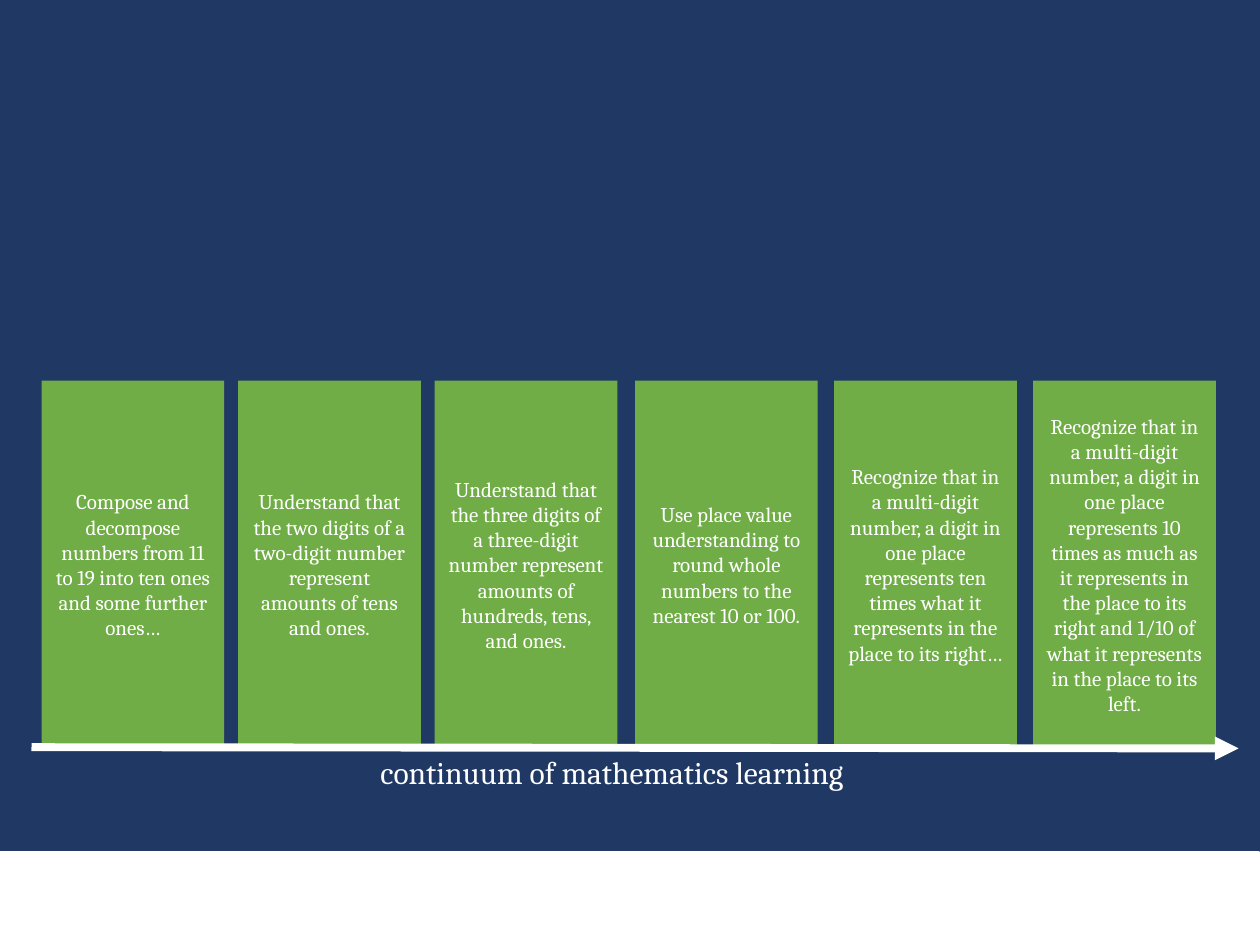
import pptx
import pptx.dml.color
import pptx.enum.shapes
import pptx.enum.text
import pptx.util
from lxml import etree
from pptx.oxml.ns import qn

COLORS = {"navy": "203864", "green": "70AD47", "white": "FFFFFF"}
WIDTH, HEIGHT = 10, 7.5

STANDARDS = [
    "Compose and decompose numbers from 11 to 19 into ten ones and some further ones…",
    "Understand that the two digits of a two-digit number represent amounts of tens and ones.",
    "Understand that the three digits of a three-digit number represent amounts of "
    "hundreds, tens, and ones.",
    "Use place value understanding to round whole numbers to the nearest 10 or 100.",
    "Recognize that in a multi-digit number, a digit in one place represents ten times "
    "what it represents in the place to its right…",
    "Recognize that in a multi-digit number, a digit in one place represents 10 times as "
    "much as it represents in the place to its right and 1/10 of what it represents in "
    "the place to its left.",
]


def rgb(name):
    return pptx.dml.color.RGBColor.from_string(COLORS[name])


class Deck:
    """Holds the style and the current slide; lengths are shares of the slide."""

    font = "Cambria"

    def __init__(self):
        self.prs = pptx.Presentation()
        self.prs.slide_width = pptx.util.Inches(WIDTH)
        self.prs.slide_height = pptx.util.Inches(HEIGHT)

    def slide(self, background):
        self.s = self.prs.slides.add_slide(self.prs.slide_layouts[6])
        self.s.background.fill.solid()
        self.s.background.fill.fore_color.rgb = rgb(background)

    def pos(self, x, y):
        return int(self.prs.slide_width * x), int(self.prs.slide_height * y)

    def add_text(self, tf, text, size, align):
        tf.word_wrap = True
        p = tf.paragraphs[0]
        p.alignment = align
        r = p.add_run()
        r.text = text
        r.font.name = self.font
        r.font.size = pptx.util.Pt(size)
        r.font.color.rgb = rgb("white")

    def box(self, x, y, w, h, fill, text=None, line=None):
        sp = self.s.shapes.add_shape(pptx.enum.shapes.MSO_SHAPE.RECTANGLE,
                                     *self.pos(x, y), *self.pos(w, h))
        sp.shadow.inherit = False
        sp.fill.solid()
        sp.fill.fore_color.rgb = rgb(fill)
        if line:
            sp.line.color.rgb = rgb(line)
            sp.line.width = pptx.util.Pt(1)
        else:
            sp.line.fill.background()
        if text:
            sp.text_frame.vertical_anchor = pptx.enum.text.MSO_ANCHOR.MIDDLE
            self.add_text(sp.text_frame, text, 12, pptx.enum.text.PP_ALIGN.CENTER)

    def arrow(self, x1, y1, x2, y2, color, width):
        c = self.s.shapes.add_connector(pptx.enum.shapes.MSO_CONNECTOR.STRAIGHT,
                                        *self.pos(x1, y1), *self.pos(x2, y2))
        c.line.color.rgb = rgb(color)
        c.line.width = pptx.util.Pt(width)
        sp_pr = c._element.spPr
        etree.SubElement(sp_pr.find(qn("a:ln")), qn("a:tailEnd"), type="triangle")
        etree.SubElement(sp_pr, qn("a:effectLst"))

    def label(self, x, y, w, h, text, size):
        sp = self.s.shapes.add_textbox(*self.pos(x, y), *self.pos(w, h))
        self.add_text(sp.text_frame, text, size, pptx.enum.text.PP_ALIGN.LEFT)
        sp.text_frame.auto_size = pptx.enum.text.MSO_AUTO_SIZE.SHAPE_TO_FIT_TEXT


def main():
    deck = Deck()
    deck.slide("navy")

    # Footer band
    deck.box(0, 6.76 / HEIGHT, 9.99 / WIDTH, 0.74 / HEIGHT, "white", line="white")

    # Standards: two groups of three columns, the second spaced slightly wider
    lefts = [start + step * i for start, step in ((0.33, 1.56), (5.04, 1.58))
             for i in range(3)]
    for left, text in zip(lefts, STANDARDS):
        deck.box(left / WIDTH, 3.02 / HEIGHT, 1.45 / WIDTH, 2.92 / HEIGHT, "green", text)

    # Continuum arrow and its caption
    deck.arrow(0.25 / WIDTH, 5.93 / HEIGHT, 9.83 / WIDTH, 5.94 / HEIGHT, "white", 4.5)
    deck.label(2.92 / WIDTH, 5.93 / HEIGHT, 6.25 / WIDTH, 0.4 / HEIGHT,
               "continuum of mathematics learning", 18)

    deck.prs.save("out.pptx")


if __name__ == "__main__":
    main()
